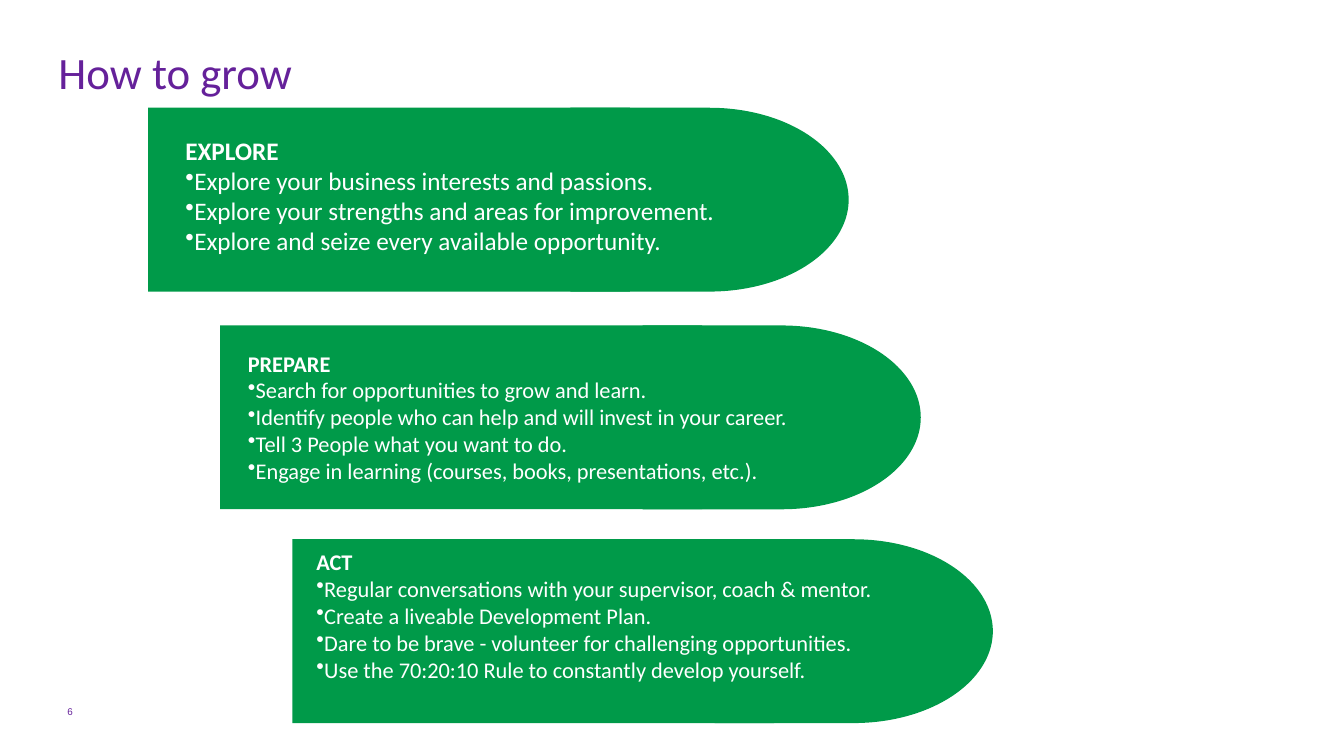
"""Build the "How to grow" slide: three stepped banners of career advice."""
from lxml import etree
from pptx import Presentation
from pptx.dml.color import RGBColor
from pptx.enum import shapes, text
from pptx.oxml import ns
from pptx.util import Pt

GREEN = RGBColor(0x00, 0x9A, 0x49)
PURPLE = RGBColor(0x65, 0x21, 0x9A)
WHITE = RGBColor(0xFF, 0xFF, 0xFF)

FIRST_LEFT, STEP_RIGHT = 105.8, 51.5
BANNER_HEIGHT, BODY_WIDTH = 131.3, 344.2
TIP_OFFSET, TIP_WIDTH = 301.7, 198.7

STAGES = [
    (77, (125.3, 92.9, 396.7, 94.3), 18, False, [
        "EXPLORE",
        "Explore your business interests and passions.",
        "Explore your strengths and areas for improvement.",
        "Explore and seize every available opportunity.",
    ]),
    (232.5, (169.9, 246.2, 404.6, 104.4), 16, False, [
        "PREPARE",
        "Search for opportunities to grow and learn.",
        "Identify people who can help and will invest in your career.",
        "Tell 3 People what you want to do.",
        "Engage in learning (courses, books, presentations, etc.).",
    ]),
    (385.2, (218.9, 388.1, 480.2, 106.6), 16, True, [
        "ACT",
        "Regular conversations with your supervisor, coach & mentor.",
        "Create a liveable Development Plan.",
        "Dare to be brave - volunteer for challenging opportunities.",
        "Use the 70:20:10 Rule to constantly develop yourself.",
    ]),
]


def add_text(box, lines, size, color, font="Calibri", wrap=True):
    frame = slide.shapes.add_textbox(*map(Pt, box)).text_frame
    frame.word_wrap = wrap
    frame.text = "\n".join(lines)
    for paragraph in frame.paragraphs:
        paragraph.font.size = Pt(size)
        paragraph.font.name = font
        paragraph.font.color.rgb = color
    return frame


prs = Presentation()
prs.slide_width, prs.slide_height = Pt(960), Pt(540)
slide = prs.slides.add_slide(prs.slide_layouts[6])

page_number = add_text((48.2, 504, 34.6, 8.6), ["6"], 7, PURPLE, "Arial")
page_number.vertical_anchor = text.MSO_ANCHOR.MIDDLE
title = add_text((41.8, 36, 868.3, 77.8), ["How to grow"], 32, PURPLE)
title.paragraphs[0].line_spacing = 0.9
for frame in (page_number, title):
    frame.margin_left = frame.margin_top = frame.margin_right = frame.margin_bottom = 0

for index, (top, advice_box, size, wrap, lines) in enumerate(STAGES):
    left = FIRST_LEFT + index * STEP_RIGHT
    for preset, part_left, width in (
        (shapes.MSO_SHAPE.FLOWCHART_DELAY, left + TIP_OFFSET, TIP_WIDTH),
        (shapes.MSO_SHAPE.RECTANGLE, left, BODY_WIDTH),
    ):
        part = slide.shapes.add_shape(preset, Pt(part_left), Pt(top), Pt(width), Pt(BANNER_HEIGHT))
        part.shadow.inherit = False
        part.fill.solid()
        part.fill.fore_color.rgb = GREEN
        part.line.fill.background()

    advice = add_text(advice_box, lines, size, WHITE, wrap=wrap)
    advice.auto_size = text.MSO_AUTO_SIZE.SHAPE_TO_FIT_TEXT
    heading, *tips = advice.paragraphs
    heading.runs[0].font.bold = True
    for tip in tips:
        properties = tip._p.get_or_add_pPr()
        bullet = etree.Element(ns.qn("a:buChar"), char="•")
        properties.insert(0, bullet)

prs.save("out.pptx")
